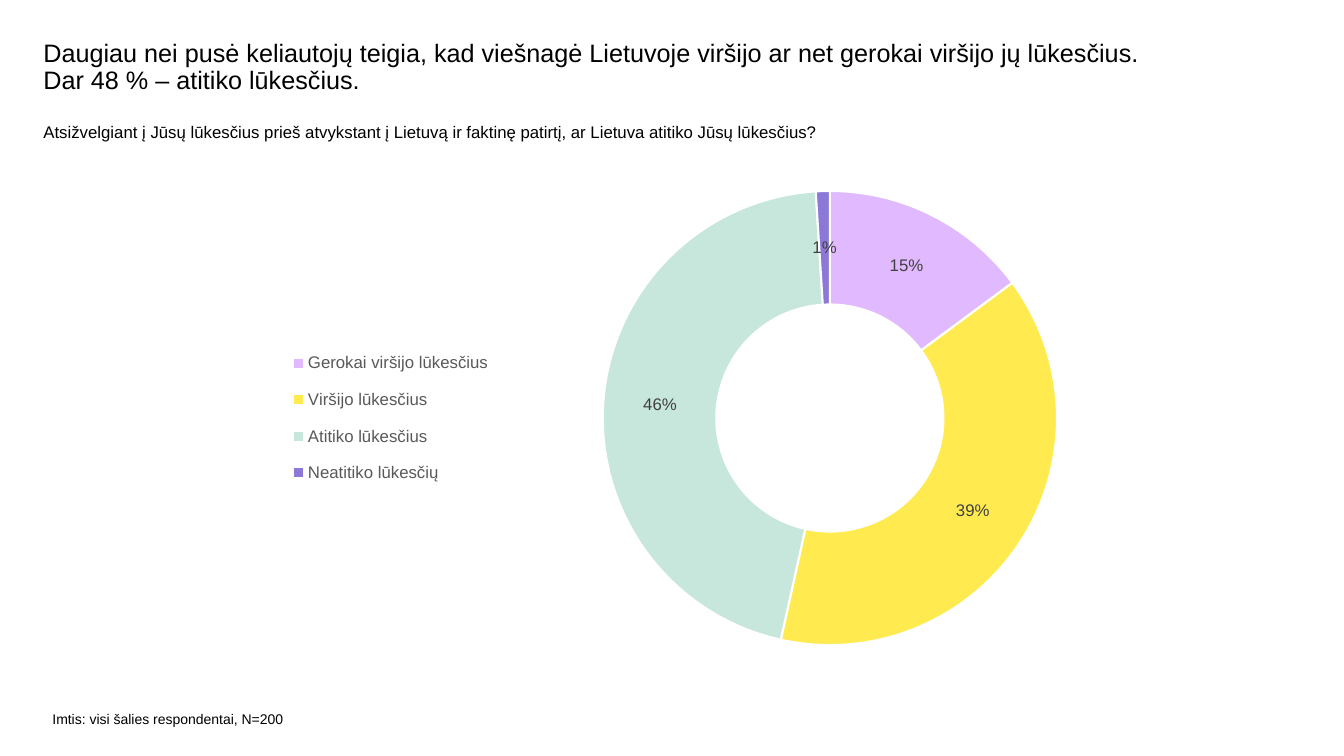
from dataclasses import dataclass

from lxml import etree
from pptx import Presentation
from pptx.chart.data import CategoryChartData
from pptx.dml.color import RGBColor
from pptx.enum.chart import XL_CHART_TYPE, XL_LEGEND_POSITION
from pptx.oxml.ns import qn
from pptx.util import Inches, Pt

DONUT = XL_CHART_TYPE.DOUGHNUT
BOTTOM = XL_LEGEND_POSITION.BOTTOM
FACE = "Arial"
BLACK = RGBColor(0x00, 0x00, 0x00)
WHITE = RGBColor(0xFF, 0xFF, 0xFF)
GRAY = RGBColor(0x59, 0x59, 0x59)
DARK = RGBColor(0x40, 0x40, 0x40)
LILAC = RGBColor(0xE1, 0xB9, 0xFF)
YELLOW = RGBColor(0xFF, 0xEB, 0x50)
MINT = RGBColor(0xC7, 0xE6, 0xDC)
VIOLET = RGBColor(0x8C, 0x78, 0xD7)


@dataclass
class Box:
    x: float
    y: float
    w: float
    h: float


@dataclass
class Label:
    text: str
    box: Box
    size: int
    spacing: float = 1.0


@dataclass
class Slice:
    name: str
    share: float
    color: RGBColor


LABELS = [
    Label("Daugiau nei pusė keliautojų teigia, kad viešnagė Lietuvoje viršijo "
          "ar net gerokai viršijo jų lūkesčius. Dar 48 % – atitiko lūkesčius.",
          Box(0.43, 0.4, 11.25, 0.6), 18, 0.9),
    Label("Atsižvelgiant į Jūsų lūkesčius prieš atvykstant į Lietuvą ir faktinę "
          "patirtį, ar Lietuva atitiko Jūsų lūkesčius?",
          Box(0.43, 1.21, 11.89, 0.61), 12),
    Label("Imtis: visi šalies respondentai, N=200",
          Box(0.52, 7.05, 3.86, 0.28), 10),
]
SLICES = [
    Slice("Gerokai viršijo lūkesčius", 0.15, LILAC),
    Slice("Viršijo lūkesčius", 0.39, YELLOW),
    Slice("Atitiko lūkesčius", 0.46, MINT),
    Slice("Neatitiko lūkesčių", 0.01, VIOLET),
]
CHART = Box(1.78, 1.69, 10.24, 5.12)
RING = Box(0.41, 0.04, 0.44, 0.88)
KEY = Box(0.09, 0.32, 0.23, 0.32)


def style(font, size: int, color: RGBColor) -> None:
    font.name = FACE
    font.size = Pt(size)
    font.color.rgb = color


def add_label(slide, label: Label) -> None:
    box = label.box
    frame = slide.shapes.add_textbox(
        Inches(box.x), Inches(box.y), Inches(box.w), Inches(box.h)).text_frame
    frame.word_wrap = True
    frame.margin_left = frame.margin_right = 0
    frame.margin_top = frame.margin_bottom = 0
    frame.text = label.text
    para = frame.paragraphs[0]
    para.line_spacing = label.spacing
    style(para.runs[0].font, label.size, BLACK)


def place(parent, index: int, box: Box, inner: bool = False) -> None:
    for old in parent.findall(qn("c:layout")):
        parent.remove(old)
    layout = etree.Element(qn("c:layout"))
    manual = etree.SubElement(layout, qn("c:manualLayout"))
    rules = [("layoutTarget", "inner")] if inner else []
    rules += [("xMode", "edge"), ("yMode", "edge")]
    rules += [(key, str(getattr(box, key))) for key in "xywh"]
    for tag, value in rules:
        etree.SubElement(manual, qn(f"c:{tag}")).set("val", value)
    parent.insert(index, layout)


def add_donut(slide) -> None:
    data = CategoryChartData(number_format="0%")
    data.categories = [part.name for part in SLICES]
    data.add_series("Series 1", [part.share for part in SLICES])
    chart = slide.shapes.add_chart(
        DONUT, Inches(CHART.x), Inches(CHART.y),
        Inches(CHART.w), Inches(CHART.h), data).chart
    style(chart.font, 10, BLACK)
    chart.has_title = False
    chart.has_legend = True
    legend = chart.legend
    legend.position = BOTTOM
    legend.include_in_layout = False
    style(legend.font, 12, GRAY)
    root = chart.element
    place(root.find(".//" + qn("c:legend")), 1, KEY)
    place(root.find(".//" + qn("c:plotArea")), 0, RING, inner=True)

    plot = chart.plots[0]
    plot.vary_by_categories = True
    series = plot.series[0]
    for index, part in enumerate(SLICES):
        shape = series.points[index].format
        shape.fill.solid()
        shape.fill.fore_color.rgb = part.color
        shape.line.color.rgb = WHITE
        shape.line.width = Pt(1.5)
    labels = series.data_labels
    labels.show_value = True
    labels.show_percentage = False
    labels.number_format = "0%"
    labels.number_format_is_linked = False
    style(labels.font, 12, DARK)


def main() -> None:
    deck = Presentation()
    deck.slide_width = Inches(13.33)
    deck.slide_height = Inches(7.5)
    slide = deck.slides.add_slide(deck.slide_layouts[6])
    for label in LABELS:
        add_label(slide, label)
    add_donut(slide)
    deck.save("out.pptx")


if __name__ == "__main__":
    main()
